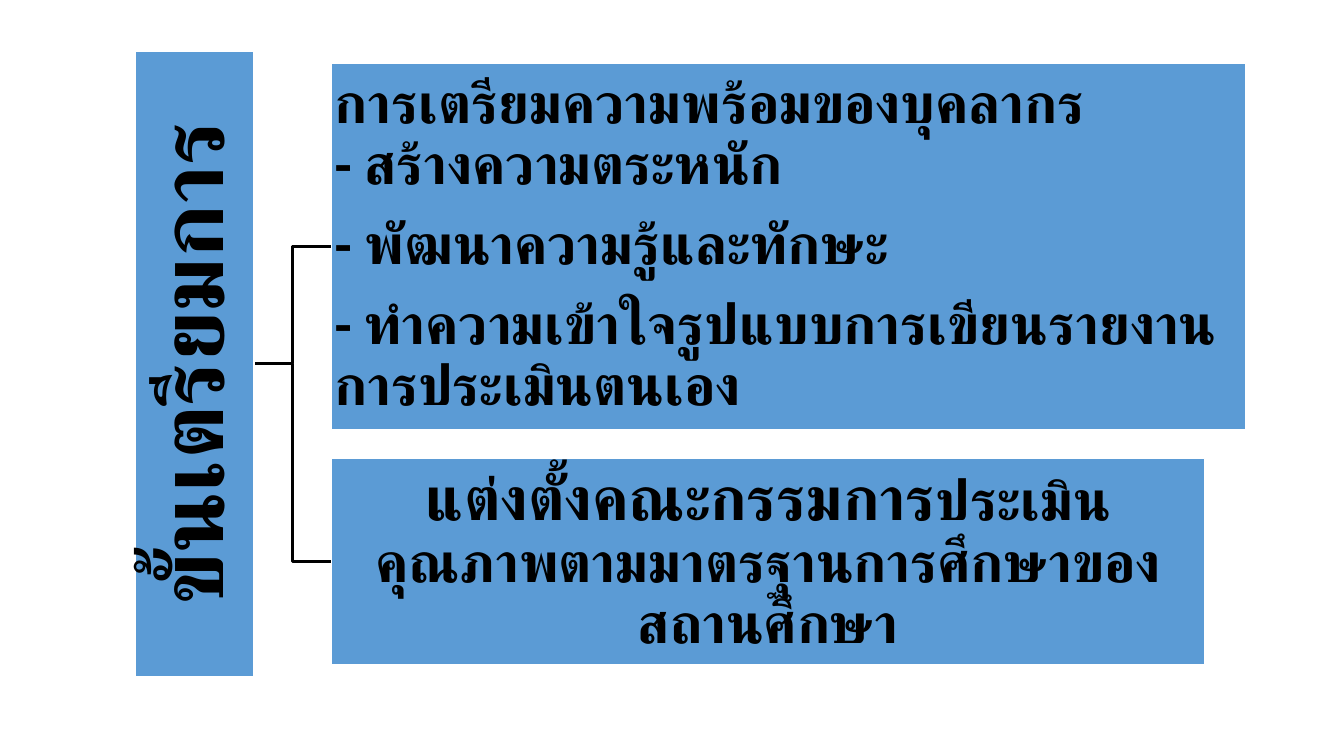
from lxml import etree
from pptx import Presentation
from pptx import util as u
from pptx.dml.color import RGBColor
from pptx.enum import lang, shapes, text
from pptx.oxml import ns

BLUE = RGBColor(0x5B, 0x9B, 0xD5)
BLACK = RGBColor(0, 0, 0)
WHITE = RGBColor(255, 255, 255)
FONT = "Calibri"
LEFT, CENTER = text.PP_ALIGN.LEFT, text.PP_ALIGN.CENTER


class Chart:
    """Style and current slide; areas are percentages of the slide's size."""

    def __init__(self, prs):
        self.w, self.h = prs.slide_width, prs.slide_height
        self.s = prs.slides.add_slide(prs.slide_layouts[6])

    def x(self, share):
        return int(self.w * share / 100)

    def y(self, share):
        return int(self.h * share / 100)

    def box(self, area, paragraphs, align, inset=0.03, turned=False):
        """Filled box; each paragraph is a list of (text, size) runs."""
        left, top, width, height = area
        x, y, w, h = self.x(left), self.y(top), self.x(width), self.y(height)
        if turned:
            x, y, w, h = x + (w - h) // 2, y + (h - w) // 2, h, w
        sp = self.s.shapes.add_shape(shapes.MSO_SHAPE.RECTANGLE, x, y, w, h)
        sp.rotation = 270 if turned else 0
        sp.shadow.inherit = False
        sp.fill.solid()
        sp.fill.fore_color.rgb = BLUE
        sp.line.color.rgb = WHITE
        sp.line.width = u.Pt(1)
        tf = sp.text_frame
        tf.word_wrap = True
        tf.vertical_anchor = text.MSO_ANCHOR.MIDDLE
        tf.margin_left = tf.margin_right = u.Inches(inset)
        tf.margin_top = tf.margin_bottom = u.Inches(inset)
        for i, runs in enumerate(paragraphs):
            p = tf.paragraphs[0] if i == 0 else tf.add_paragraph()
            self.paragraph(p, runs, align)

    def paragraph(self, p, runs, align):
        p.alignment = align
        p.line_spacing = 0.9
        after = etree.SubElement(p._p.get_or_add_pPr(), ns.qn("a:spcAft"))
        etree.SubElement(after, ns.qn("a:spcPct"), val="35000")
        p.font.name = FONT
        p.font.bold = True
        p.font.color.rgb = BLACK
        p.font.language_id = lang.MSO_LANGUAGE_ID.THAI
        for words, size in runs:
            for i, line in enumerate(words.split("\n")):
                if i:
                    p.add_line_break()
                r = p.add_run()
                r.text = line
                r.font.size = u.Pt(size)

    def branch(self, parent, child):
        """Elbow line from a parent's right edge to a child's left edge."""
        x1, x2 = self.x(parent[0] + parent[2]), self.x(child[0])
        y1, y2 = (self.y(a[1] + a[3] / 2) for a in (parent, child))
        mid = (x1 + x2) // 2
        fb = self.s.shapes.build_freeform(x1, y1)
        fb.add_line_segments([(mid, y1), (mid, y2), (x2, y2)], close=False)
        sp = fb.convert_to_shape()
        sp.shadow.inherit = False
        sp.fill.background()
        sp.line.color.rgb = BLACK
        sp.line.width = u.Pt(2)


def main():
    prs = Presentation()
    prs.slide_width, prs.slide_height = u.Inches(13.33), u.Inches(7.5)
    chart = Chart(prs)

    stage = (10.05, 6.8, 8.85, 82.67)
    staff = (24.68, 8.4, 68.03, 48.4)
    committee = (24.68, 60.67, 64.95, 27.2)

    # Branches
    for child in (committee, staff):
        chart.branch(stage, child)

    # Stage name, read upwards
    chart.box(stage, [[("ขั้นเตรียมการ", 65)]], CENTER, inset=0.05, turned=True)

    # Staff preparation
    steps = [
        "การเตรียมความพร้อมของบุคลากร\n- สร้างความตระหนัก",
        "- พัฒนาความรู้และทักษะ",
        "- ทำความเข้าใจรูปแบบการเขียนรายงานการประเมินตนเอง",
    ]
    chart.box(staff, [[(step, 40)] for step in steps], LEFT)

    # Assessment committee
    chart.box(committee, [[
        ("แต่งตั้งคณะกรรมการ", 44),
        ("ประเมินคุณภาพตามมาตรฐานการศึกษาของสถานศึกษา", 40),
    ]], CENTER)

    prs.save("out.pptx")


if __name__ == "__main__":
    main()
